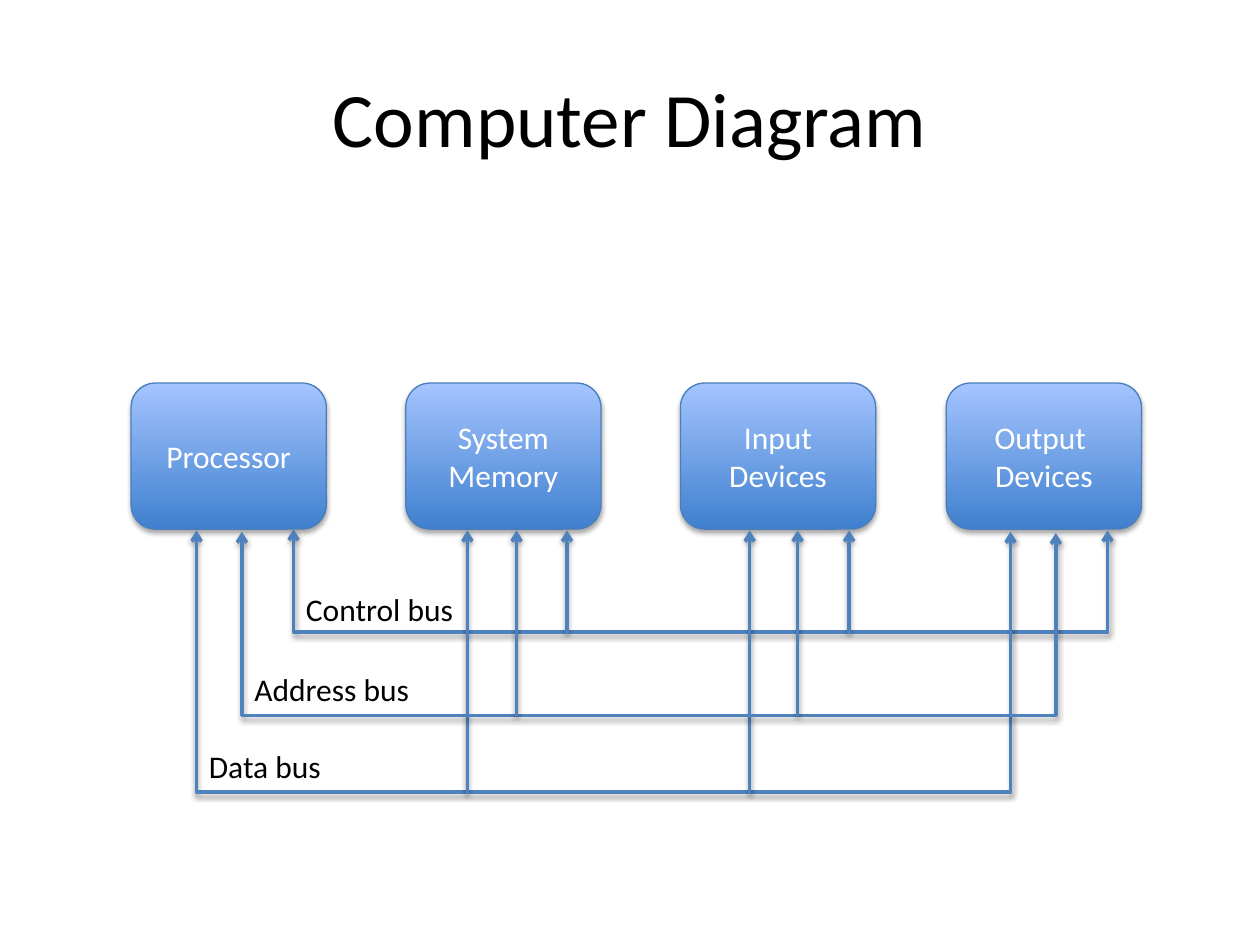
from lxml.etree import SubElement
from pptx import Presentation
from pptx.dml.color import RGBColor
from pptx.enum.shapes import MSO_CONNECTOR, MSO_SHAPE
from pptx.enum.text import MSO_ANCHOR, PP_ALIGN
from pptx.oxml.ns import qn
from pptx.util import Inches, Pt

# Content
TITLE = "Computer Diagram"
DEVICES = [  # left edge, lines of text
    (1.04, ["Processor"]),
    (3.22, ["System Memory"]),
    (5.40, ["Input", "Devices"]),
    (7.51, ["Output ", "Devices"]),
]
BUSES = [  # label, label top, label width, left end, top, bottom, taps, tap foot
    ("Control bus", 4.63, 1.39, 2.33, 4.20, 5.03, (6.74, 4.50), 5.03),
    ("Data bus", 5.88, 1.10, 1.56, 4.21, 6.32, (5.95, 3.71), 6.30),
    ("Address bus", 5.27, 1.45, 1.92, 4.22, 5.70, (6.33, 4.10), 5.68),
]
BOX_TOP, BOX_WIDTH, BOX_HEIGHT = 3.04, 1.55, 1.16
BUS_SPAN, BUS_STEP, TAP_TOP = 6.46, 0.01, 4.21
FONT, BLACK, WHITE = "Calibri", "000000", "FFFFFF"
BUS_BLUE, EDGE_BLUE, DARK_BLUE, LIGHT_BLUE = "4F81BD", "4B7EBC", "3F80CE", "A4C4FF"


def colour(value):
    return RGBColor.from_string(value)


def add_shadow(shape, opacity, distance):
    effects = SubElement(shape._element.spPr, qn("a:effectLst"))
    shadow = SubElement(effects, qn("a:outerShdw"), blurRad=str(Pt(3.1)),
                        dist=str(Pt(distance)), dir="5400000", rotWithShape="0")
    tone = SubElement(shadow, qn("a:srgbClr"), val=BLACK)
    SubElement(tone, qn("a:alpha"), val=str(opacity * 1000))


def write(shape, lines, size, tone, align, anchor, wrap=True):
    frame = shape.text_frame
    frame.word_wrap = wrap
    frame.vertical_anchor = anchor
    frame.text = "\n".join(lines)
    for para in frame.paragraphs:
        para.alignment = align
        para.font.name = FONT
        para.font.size = Pt(size)
        para.font.color.rgb = colour(tone)


def add_text(page, place, text, size, align, anchor, wrap):
    box = page.shapes.add_textbox(*map(Inches, place))
    write(box, [text], size, BLACK, align, anchor, wrap)


def add_device(page, left, lines):
    box = page.shapes.add_shape(MSO_SHAPE.ROUNDED_RECTANGLE, Inches(left), Inches(BOX_TOP),
                                Inches(BOX_WIDTH), Inches(BOX_HEIGHT))
    box.fill.gradient()
    box.fill.gradient_angle = 90
    for stop, tone, position in zip(box.fill.gradient_stops, (DARK_BLUE, LIGHT_BLUE), (0, 1)):
        stop.color.rgb = colour(tone)
        stop.position = position
    box.line.color.rgb = colour(EDGE_BLUE)
    box.line.width = Pt(0.75)
    add_shadow(box, 35, 1.8)
    write(box, lines, 18, WHITE, PP_ALIGN.CENTER, MSO_ANCHOR.MIDDLE)


def add_arrow(page, kind, start, end, heads):
    arrow = page.shapes.add_connector(kind, *map(Inches, (*start, *end)))
    arrow.line.color.rgb = colour(BUS_BLUE)
    arrow.line.width = Pt(2)
    for head in heads:
        SubElement(arrow.line._get_or_add_ln(), qn(head), type="arrow")
    add_shadow(arrow, 38, 1.6)
    return arrow


def add_bus(page, left, top, bottom):
    # A quarter-turned elbow whose middle segment drops below both ends
    x = left + (BUS_SPAN - BUS_STEP) / 2
    y = top + (BUS_STEP - BUS_SPAN) / 2
    bus = add_arrow(page, MSO_CONNECTOR.ELBOW, (x, y), (x + BUS_STEP, y + BUS_SPAN),
                    ("a:headEnd", "a:tailEnd"))
    properties = bus._element.spPr
    turn = properties.find(qn("a:xfrm"))
    turn.set("rot", "16200000")
    turn.set("flipH", "1")
    geometry = properties.find(qn("a:prstGeom"))
    guides = geometry.find(qn("a:avLst"))
    if guides is None:
        guides = SubElement(geometry, qn("a:avLst"))
    drop = round((bottom - top) / BUS_STEP * 100000)
    SubElement(guides, qn("a:gd"), name="adj1", fmla=f"val {drop}")


def main():
    deck = Presentation()
    deck.slide_width, deck.slide_height = Inches(10), Inches(7.5)
    page = deck.slides.add_slide(deck.slide_layouts[6])

    # Title and devices
    add_text(page, (0.5, 0.3, 9, 1.25), TITLE, 44, PP_ALIGN.CENTER, MSO_ANCHOR.MIDDLE, True)
    for left, lines in DEVICES:
        add_device(page, left, lines)

    # Buses with their taps, then the labels on top
    for _, _, _, left, top, bottom, taps, foot in BUSES:
        add_bus(page, left, top, bottom)
        for x in taps:
            add_arrow(page, MSO_CONNECTOR.STRAIGHT, (x, foot), (x, TAP_TOP), ("a:tailEnd",))
    for label, label_top, width, left, *_ in BUSES:
        add_text(page, (left, label_top, width, 0.4), label, 18,
                 PP_ALIGN.LEFT, MSO_ANCHOR.TOP, False)

    deck.save("out.pptx")


if __name__ == "__main__":
    main()
